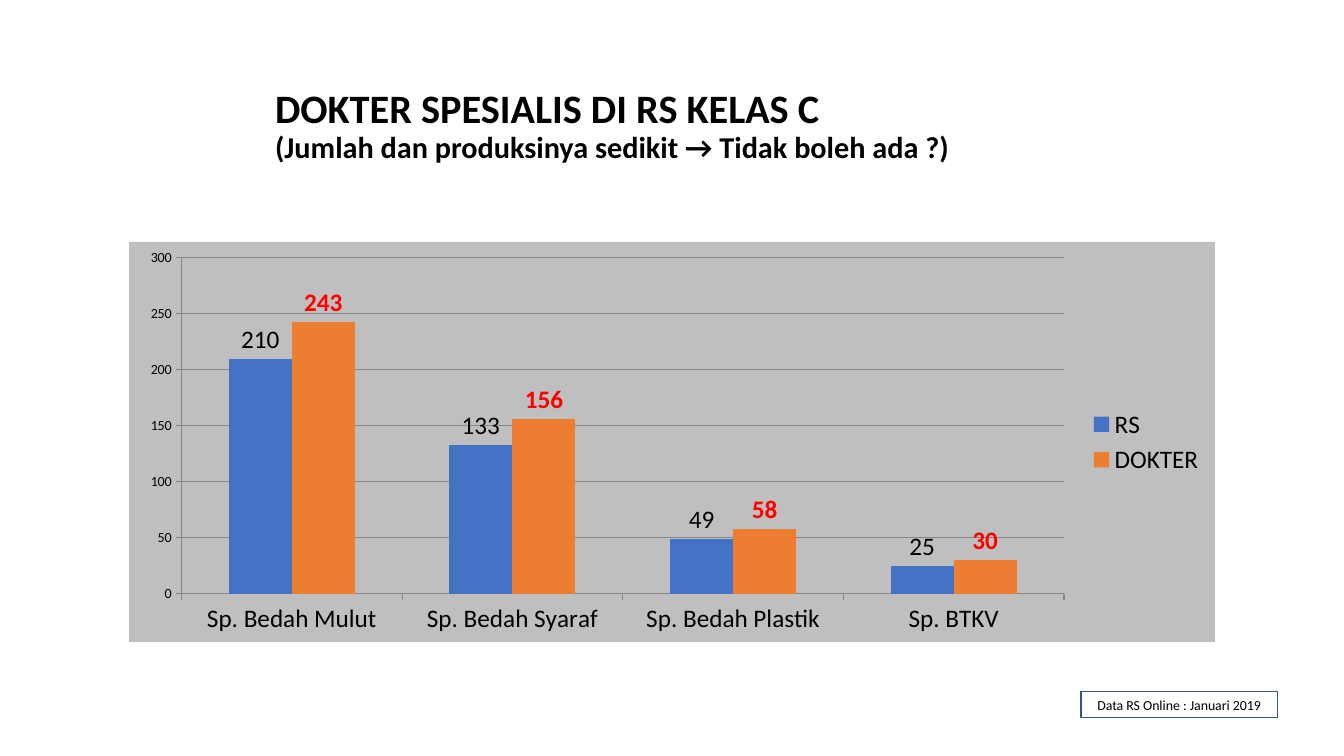
from lxml import etree
from pptx import Presentation
from pptx.chart.data import CategoryChartData
from pptx.dml.color import RGBColor
from pptx.enum.chart import XL_CHART_TYPE, XL_LABEL_POSITION, XL_LEGEND_POSITION, XL_TICK_MARK
from pptx.enum.shapes import MSO_SHAPE
from pptx.enum.text import MSO_ANCHOR, PP_ALIGN
from pptx.oxml import parse_xml
from pptx.oxml.ns import nsdecls, qn
from pptx.util import Inches, Pt

BLACK = RGBColor(0x00, 0x00, 0x00)
RED = RGBColor(0xFF, 0x00, 0x00)
BLUE = RGBColor(0x44, 0x72, 0xC4)
ORANGE = RGBColor(0xED, 0x7D, 0x31)
GREY = RGBColor(0xBF, 0xBF, 0xBF)
GRID = RGBColor(0x86, 0x86, 0x86)
NAVY = RGBColor(0x32, 0x54, 0x91)

CATEGORIES = ["Sp. Bedah Mulut", "Sp. Bedah Syaraf", "Sp. Bedah Plastik", "Sp. BTKV"]
# name, values, bar colour, label colour, bold labels
SERIES = [
    ("RS", [210, 133, 49, 25], BLUE, BLACK, False),
    ("DOKTER", [243, 156, 58, 30], ORANGE, RED, True),
]


def style_font(font, size, color=BLACK, bold=False):
    for name, value in {"name": "Calibri", "size": Pt(size), "bold": bold}.items():
        setattr(font, name, value)
    font.color.rgb = color


def add_span(para, text, size, bold=False):
    span = para.add_run()
    span.text = text
    style_font(span.font, size, bold=bold)


def fill_chart_area(chart, color):
    area = parse_xml(f"<c:spPr {nsdecls('c', 'a')}/>")
    fill = etree.SubElement(area, qn("a:solidFill"))
    etree.SubElement(fill, qn("a:srgbClr"), val=str(color))
    line = etree.SubElement(area, qn("a:ln"))
    etree.SubElement(line, qn("a:noFill"))
    chart.element.find(qn("c:chart")).addnext(area)


def style_axis(axis, size):
    axis.major_tick_mark = XL_TICK_MARK.OUTSIDE
    axis.minor_tick_mark = XL_TICK_MARK.NONE
    style_font(axis.tick_labels.font, size)
    axis.format.line.color.rgb = GRID
    axis.format.line.width = Pt(0.75)


def style_series(series, color, label_color, bold):
    series.format.fill.solid()
    series.format.fill.fore_color.rgb = color
    labels = series.data_labels
    labels.show_value = True
    labels.position = XL_LABEL_POSITION.OUTSIDE_END
    style_font(labels.font, 18, label_color, bold)


def add_doctor_chart(page):
    data = CategoryChartData()
    data.categories = CATEGORIES
    for name, values, *_ in SERIES:
        data.add_series(name, values)
    chart = page.shapes.add_chart(
        XL_CHART_TYPE.COLUMN_CLUSTERED,
        Inches(1.28), Inches(2.4), Inches(10.77), Inches(3.97), data).chart
    style_font(chart.font, 10)
    chart.has_title = False
    fill_chart_area(chart, GREY)

    # Axes and gridlines
    style_axis(chart.category_axis, 18)
    values_axis = chart.value_axis
    style_axis(values_axis, 10)
    for name, value in {"minimum_scale": 0, "maximum_scale": 300, "major_unit": 50}.items():
        setattr(values_axis, name, value)
    grid_line = values_axis.major_gridlines.format.line
    grid_line.color.rgb = GRID
    grid_line.width = Pt(0.75)

    # Bars
    plot = chart.plots[0]
    plot.gap_width = 150
    plot.vary_by_categories = False
    for series, (_, _, color, label_color, bold) in zip(plot.series, SERIES):
        style_series(series, color, label_color, bold)

    # Legend
    chart.has_legend = True
    chart.legend.position = XL_LEGEND_POSITION.RIGHT
    chart.legend.include_in_layout = False
    style_font(chart.legend.font, 18)


def add_title(page):
    box = page.shapes.add_textbox(Inches(2.63), Inches(0.84), Inches(8.1), Inches(1.12))
    frame = box.text_frame
    frame.word_wrap = True
    frame.margin_top = frame.margin_bottom = Inches(0.04)
    para = frame.paragraphs[0]
    para.line_spacing = 0.9
    add_span(para, "DOKTER SPESIALIS DI RS KELAS C", 28.8, True)
    para.add_line_break()
    add_span(para, "(Jumlah dan produksinya sedikit → Tidak boleh ada ?)", 21.6, True)


def add_data_note(page):
    box = page.shapes.add_shape(
        MSO_SHAPE.RECTANGLE, Inches(10.72), Inches(6.86), Inches(1.95), Inches(0.26))
    box.shadow.inherit = False
    box.fill.background()
    box.line.color.rgb = NAVY
    box.line.width = Pt(1)
    frame = box.text_frame
    frame.word_wrap = True
    frame.vertical_anchor = MSO_ANCHOR.MIDDLE
    para = frame.paragraphs[0]
    para.alignment = PP_ALIGN.CENTER
    add_span(para, "Data RS Online : Januari 2019", 9.9)


def main():
    deck = Presentation()
    deck.slide_width = Inches(13.33)
    deck.slide_height = Inches(7.5)
    page = deck.slides.add_slide(deck.slide_layouts[6])
    add_doctor_chart(page)
    add_title(page)
    add_data_note(page)
    deck.save("out.pptx")


if __name__ == "__main__":
    main()
